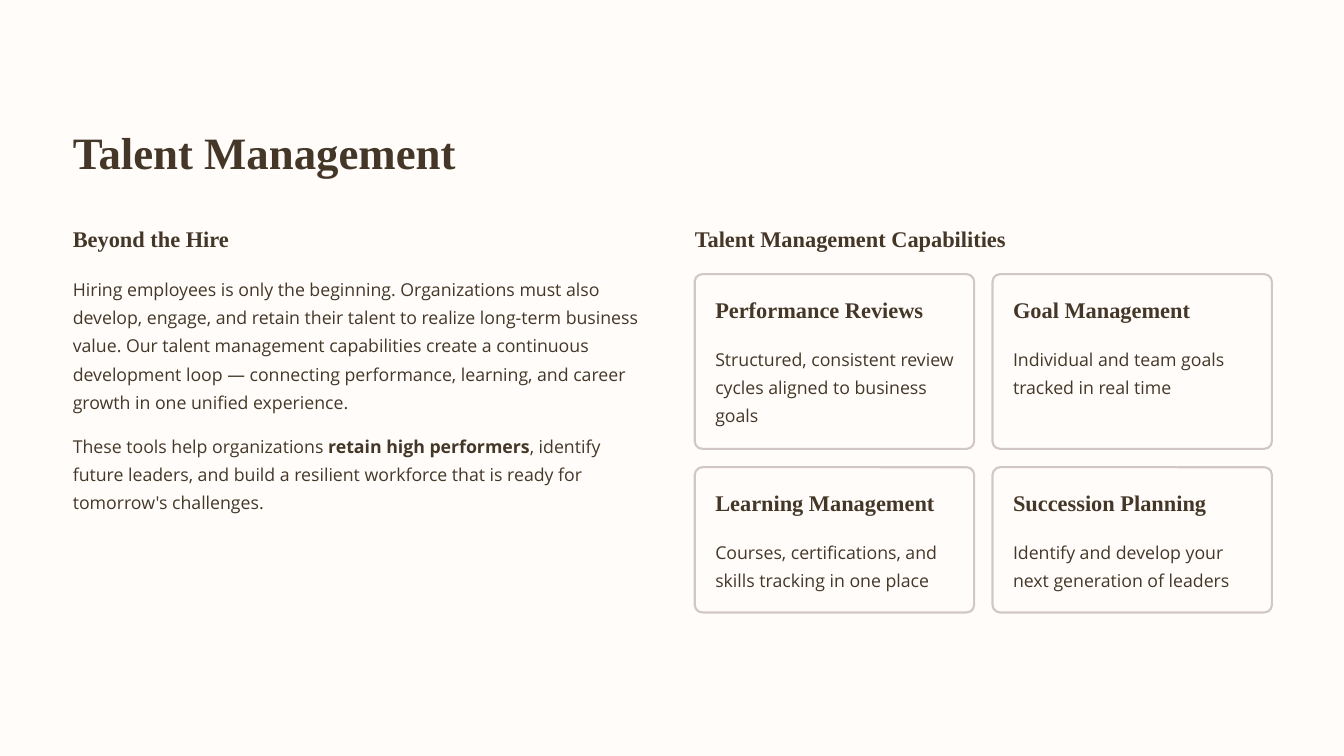
from pptx import Presentation
from pptx.dml.color import RGBColor
from pptx.enum.shapes import MSO_SHAPE
from pptx.enum.text import MSO_ANCHOR, MSO_AUTO_SIZE, PP_ALIGN
from pptx.util import Pt

ROUNDED = MSO_SHAPE.ROUNDED_RECTANGLE
TOP = MSO_ANCHOR.TOP
LEFT = PP_ALIGN.LEFT
NO_FIT = MSO_AUTO_SIZE.NONE

TITLE = "Talent Management"
INTRO_HEADING = "Beyond the Hire"
INTRO = [
    [("Hiring employees is only the beginning. Organizations must also develop, engage, "
      "and retain their talent to realize long-term business value. Our talent management "
      "capabilities create a continuous development loop — connecting performance, learning, "
      "and career growth in one unified experience.", False)],
    [("These tools help organizations ", False),
     ("retain high performers", True),
     (", identify future leaders, and build a resilient workforce that is ready for "
      "tomorrow's challenges.", False)],
]
CARDS_HEADING = "Talent Management Capabilities"
CARD_ROWS = [
    (93.6, [("Performance Reviews",
             "Structured, consistent review cycles aligned to business goals"),
            ("Goal Management", "Individual and team goals tracked in real time")]),
    (77.8, [("Learning Management", "Courses, certifications, and skills tracking in one place"),
            ("Succession Planning", "Identify and develop your next generation of leaders")]),
]

COLORS = {"paper": "FFFCFA", "ink": "443728", "border": "D1C8C6"}
STYLES = {
    "title": {"font": {"name": "Times New Roman", "size": Pt(24)}, "spacing": 1.04, "bold": True},
    "heading": {"font": {"name": "Times New Roman", "size": Pt(12)}, "spacing": 1.04, "bold": True},
    "body": {"font": {"name": "Open Sans", "size": Pt(9.5)}, "spacing": 1.33, "bold": False},
}

MARGIN, RIGHT_X, COLUMN_W = 39, 372.2, 309
HEADING_Y, HEADING_H = 120.2, 15
CARD_Y, CARD_W, GAP, PAD = 146.9, 149.7, 9.8, 11
RADIUS = 4.1


def rgb(name):
    return RGBColor.from_string(COLORS[name])


def fill_text(s, paragraphs, style, box):
    s.left, s.top, s.width, s.height = map(Pt, box)
    look = STYLES[style]
    tf = s.text_frame
    frame = {"margin_left": 0, "margin_right": 0, "margin_top": 0, "margin_bottom": 0,
             "word_wrap": style == "body", "auto_size": NO_FIT, "vertical_anchor": TOP}
    for key, value in frame.items():
        setattr(tf, key, value)
    for i, runs in enumerate(paragraphs):
        p = tf.add_paragraph() if i else tf.paragraphs[0]
        p.alignment = LEFT
        p.line_spacing = look["spacing"]
        if i < len(paragraphs) - 1:
            p.space_after = Pt(8.5)
        for text, bold in runs:
            r = p.add_run()
            r.text = text
            for key, value in look["font"].items():
                setattr(r.font, key, value)
            r.font.bold = bold or look["bold"]
            r.font.color.rgb = rgb("ink")


def add_text(slide, paragraphs, style, *box):
    fill_text(slide.shapes.add_textbox(0, 0, 0, 0), paragraphs, style, box)


def add_card(slide, x, y, h, heading, text):
    s = slide.shapes.add_shape(ROUNDED, Pt(x), Pt(y), Pt(CARD_W), Pt(h))
    s.adjustments[0] = RADIUS / h
    s.shadow.inherit = False
    s.fill.solid()
    s.fill.fore_color.rgb = rgb("paper")
    s.line.color.rgb = rgb("border")
    s.line.width = Pt(1.13)
    inner_w = CARD_W - 2 * PAD + 0.5
    add_text(slide, [[(heading, True)]], "heading", x + PAD, y + PAD, inner_w, HEADING_H)
    add_text(slide, [[(text, False)]], "body", x + PAD, y + 36, inner_w, h - 36 - PAD)


def main():
    prs = Presentation()
    prs.slide_width, prs.slide_height = Pt(720), Pt(405)
    slide = prs.slides.add_slide(prs.slide_layouts[5])
    background = slide.background.fill
    background.solid()
    background.fore_color.rgb = rgb("paper")

    fill_text(slide.shapes.title, [[(TITLE, True)]], "title", (MARGIN, 65.6, 641.5, 30))
    for x, heading in ((MARGIN, INTRO_HEADING), (RIGHT_X, CARDS_HEADING)):
        add_text(slide, [[(heading, True)]], "heading", x, HEADING_Y, COLUMN_W, HEADING_H)
    add_text(slide, INTRO, "body", MARGIN, 145.5, COLUMN_W, 134)

    y = CARD_Y
    for h, cards in CARD_ROWS:
        for column, (heading, text) in enumerate(cards):
            add_card(slide, RIGHT_X + column * (CARD_W + GAP), y, h, heading, text)
        y += h + GAP
    prs.save("out.pptx")


if __name__ == "__main__":
    main()
